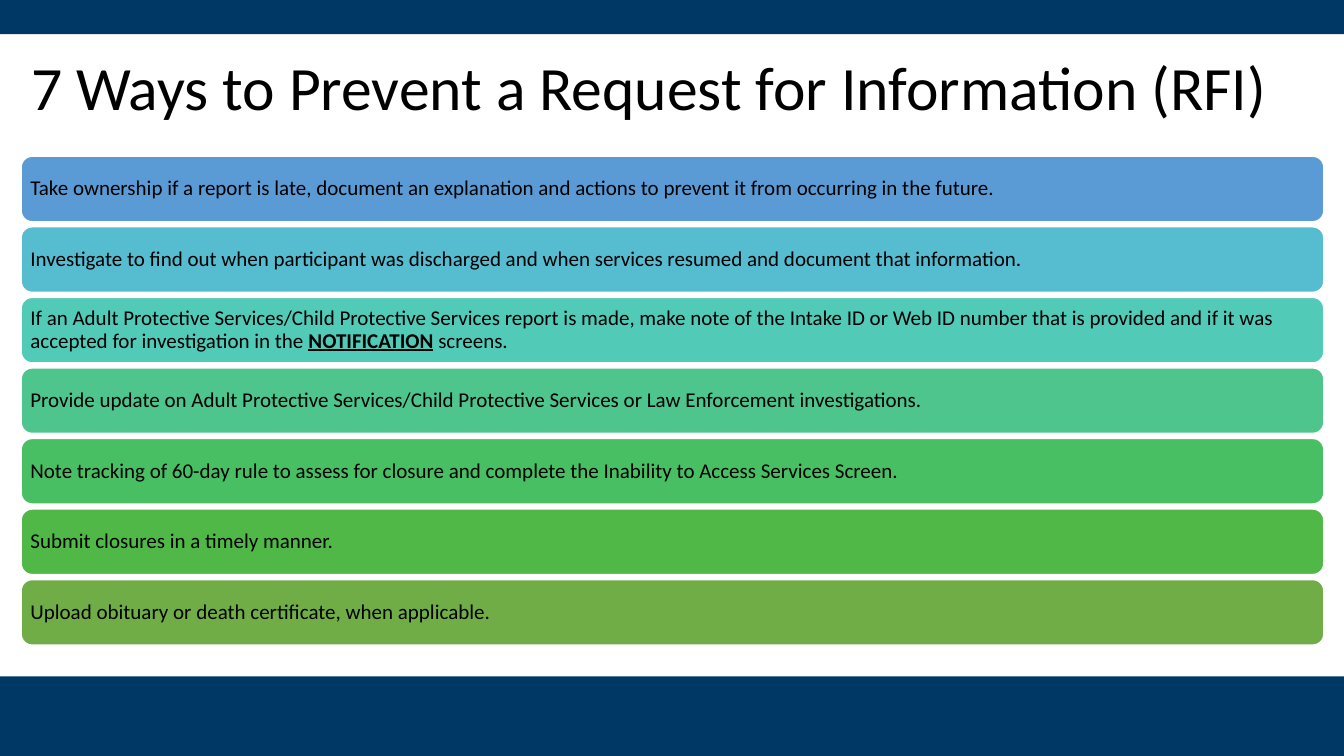
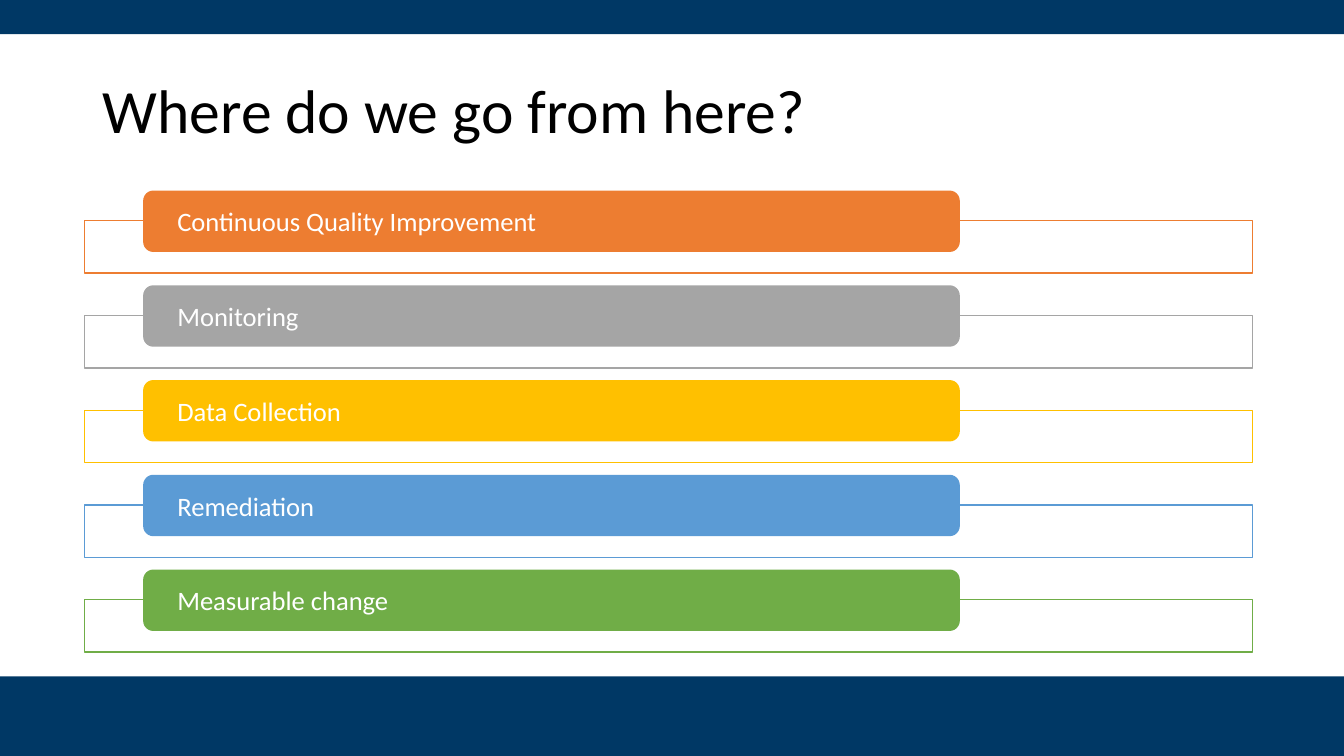
from dataclasses import dataclass

from pptx import Presentation
from pptx.dml.color import RGBColor
from pptx.enum.shapes import MSO_SHAPE as Preset
from pptx.enum.text import MSO_ANCHOR as Anchor, PP_ALIGN as Align
from pptx.util import Inches, Pt


@dataclass(frozen=True)
class Theme:
    font: str = "Calibri"
    navy: str = "003865"
    black: str = "000000"
    white: str = "FFFFFF"
    blue: str = "5B9BD5"
    green: str = "70AD47"
    orange: str = "ED7D31"
    gray: str = "A5A5A5"
    gold: str = "FFC000"
    ramp: tuple = ("56BCD0", "52CAB8", "4DC58D", "49BF64", "50B846")
    title_size: int = 44
    tip_size: int = 15
    step_size: int = 19
    line_width: int = 1
    tight: float = 0.9


THEME = Theme()
SLIDE_WIDTH, SLIDE_HEIGHT = 13.33, 7.5

TIPS = [
    ["Take ownership if a report is late, document an explanation and actions "
     "to prevent it from occurring in the future."],
    ["Investigate to find out when participant was discharged and when services "
     "resumed and document that information."],
    ["If an Adult Protective Services/Child Protective Services report is made, "
     "make note of the Intake ID or Web ID number that is provided and if it was "
     "accepted for investigation in the ", "NOTIFICATION", " screens."],
    ["Provide update on Adult Protective Services/Child Protective Services or "
     "Law Enforcement investigations."],
    ["Note tracking of 60-day rule to assess for closure and complete the "
     "Inability to Access Services Screen."],
    ["Submit closures in a timely manner."],
    ["Upload obituary or death certificate, when applicable."],
]
TIP_COLORS = (THEME.blue, *THEME.ramp, THEME.green)

STEPS = [
    ("Continuous Quality Improvement", THEME.orange),
    ("Monitoring", THEME.gray),
    ("Data Collection", THEME.gold),
    ("Remediation", THEME.blue),
    ("Measurable change", THEME.green),
]


class Deck:
    def __init__(self, theme):
        self.theme = theme
        self.presentation = Presentation()
        self.presentation.slide_width = Inches(SLIDE_WIDTH)
        self.presentation.slide_height = Inches(SLIDE_HEIGHT)
        self.slide = None

    def start_slide(self, title, left, top, width, height):
        """Add a blank slide with the shared bands and its title."""
        layout = self.presentation.slide_layouts[6]
        self.slide = self.presentation.slides.add_slide(layout)
        for band_top, band_height in ((6.71, 0.79), (0, 0.34)):
            self.box(Preset.RECTANGLE, 0, band_top, SLIDE_WIDTH, band_height,
                     self.theme.navy)
        shape = self.slide.shapes.add_textbox(
            Inches(left), Inches(top), Inches(width), Inches(height))
        self.set_text(shape, [title], self.theme.title_size, self.theme.black,
                      margins=(0.1, 0.05), spacing=self.theme.tight)

    def box(self, preset, left, top, width, height, fill, line=None):
        shape = self.slide.shapes.add_shape(
            preset, Inches(left), Inches(top), Inches(width), Inches(height))
        shape.shadow.inherit = False
        shape.fill.solid()
        shape.fill.fore_color.rgb = RGBColor.from_string(fill)
        if line:
            shape.line.color.rgb = RGBColor.from_string(line)
            shape.line.width = Pt(self.theme.line_width)
        else:
            shape.line.fill.background()
        return shape

    def set_text(self, shape, parts, size, color, margins, spacing=1.0):
        """Fill one paragraph; every second part is bold and underlined."""
        frame = shape.text_frame
        frame.word_wrap = True
        frame.vertical_anchor = Anchor.MIDDLE
        frame.margin_left = frame.margin_right = Inches(margins[0])
        frame.margin_top = frame.margin_bottom = Inches(margins[1])
        paragraph = frame.paragraphs[0]
        paragraph.alignment = Align.LEFT
        paragraph.line_spacing = spacing
        paragraph.font.name = self.theme.font
        paragraph.font.size = Pt(size)
        paragraph.font.color.rgb = RGBColor.from_string(color)
        for index, part in enumerate(parts):
            run = paragraph.add_run()
            run.text = part
            if index % 2:
                run.font.bold = run.font.underline = True

    def tip(self, top, parts, fill):
        bar = self.box(Preset.ROUNDED_RECTANGLE, 0.21, top, 12.92, 0.65,
                       fill, self.theme.white)
        self.set_text(bar, parts, self.theme.tip_size, self.theme.black,
                      margins=(0.06, 0.06), spacing=self.theme.tight)

    def step(self, top, label, color):
        """Draw a filled label overlapping the top edge of an outlined frame."""
        self.box(Preset.RECTANGLE, 0.84, top + 0.3, 11.58, 0.52,
                 self.theme.white, color)
        pill = self.box(Preset.ROUNDED_RECTANGLE, 1.42, top, 8.1, 0.61, color)
        self.set_text(pill, [label], self.theme.step_size, self.theme.white,
                      margins=(0.31, 0))


def main():
    deck = Deck(THEME)

    deck.start_slide("7 Ways to Prevent a Request for Information (RFI)",
                     0.21, 0.4, 12.95, 1)
    for index, (parts, color) in enumerate(zip(TIPS, TIP_COLORS)):
        deck.tip(1.55 + 0.7 * index, parts, color)

    deck.start_slide("Where do we go from here?", 0.92, 0.4, 11.5, 1.45)
    for index, (label, color) in enumerate(STEPS):
        deck.step(1.89 + 0.94 * index, label, color)

    deck.presentation.save("out.pptx")


if __name__ == "__main__":
    main()
